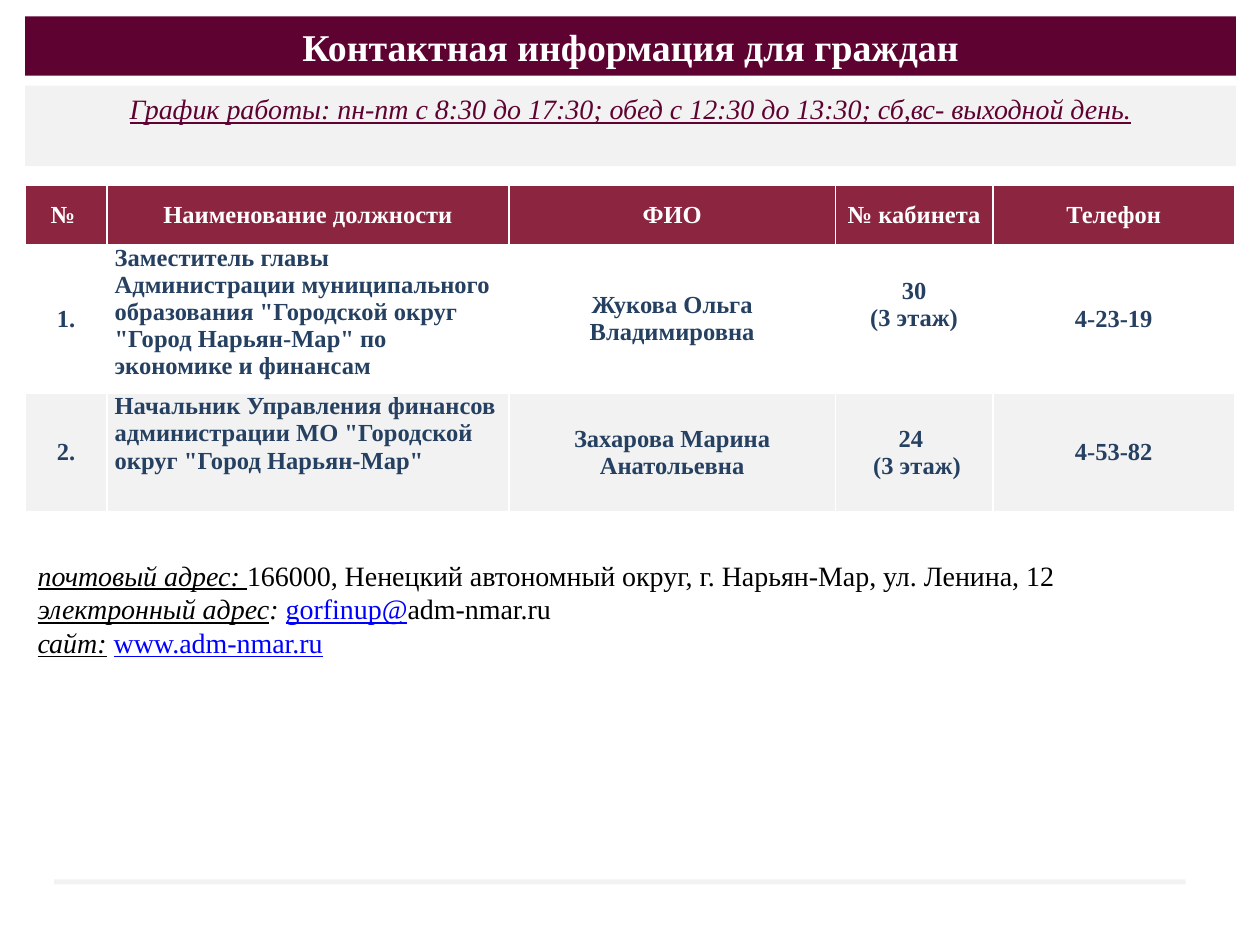
from dataclasses import dataclass

from lxml import etree
from pptx import Presentation
from pptx import util as u
from pptx.dml.color import RGBColor
from pptx.enum import shapes, text
from pptx.oxml.ns import qn


@dataclass(frozen=True)
class Theme:
    """Colours, font and type sizes of the slide."""
    font: str = "Times New Roman"
    plum: str = "5E0231"
    wine: str = "8C2540"
    grey: str = "F2F2F2"
    white: str = "FFFFFF"
    navy: str = "254061"
    black: str = "000000"
    blue: str = "0000FF"
    title_size: float = 21.6
    body_size: float = 16
    table_size: float = 14


THEME = Theme()
LEFT, WIDTH = 0.2, 9.61
COLUMNS = [0.65, 3.19, 2.59, 1.25, 1.92]
ROWS = [0.47, 1.18, 0.94]
POSITION_COLUMN = 1
CELLS = [
    ["№ ", "Наименование должности", "ФИО", "№ кабинета", "Телефон"],
    ["1.", 'Заместитель главы Администрации муниципального образования "Городской округ '
     '"Город Нарьян-Мар" по экономике и финансам',
     "Жукова Ольга Владимировна", "30\n(3 этаж)", "4-23-19"],
    ["2.", 'Начальник Управления финансов администрации МО "Городской округ "Город Нарьян-Мар"',
     "Захарова Марина Анатольевна", "24 \n (3 этаж)", "4-53-82"],
]
LABEL = {"italic": True, "underline": True}
LINK = {"color": THEME.blue, "underline": True}
CONTACTS = [
    [("почтовый адрес: ", LABEL),
     ("166000, Ненецкий автономный округ, г. Нарьян-Мар, ул. Ленина, 12", {})],
    [("электронный адрес", LABEL), (": ", {"italic": True}), ("gorfinup@", LINK),
     ("adm-nmar.ru", {})],
    [("сайт:", LABEL), (" ", {}), ("www.adm-nmar.ru", LINK)],
]


def place(left, top, width, height):
    """Turn inches into a position and size."""
    return [u.Inches(value) for value in (left, top, width, height)]


def paint(fill, color):
    """Give a solid fill its colour."""
    fill.solid()
    fill.fore_color.rgb = RGBColor.from_string(color)


def style_font(font, size, color=THEME.black, bold=False, italic=False, underline=False):
    """Set the look of a paragraph or run."""
    font.name, font.size = THEME.font, u.Pt(size)
    font.bold, font.italic, font.underline = bold, italic, underline
    font.color.rgb = RGBColor.from_string(color)


def write(frame, content, alignment, **style):
    """Fill a text frame with evenly styled paragraphs."""
    frame.text = content
    for paragraph in frame.paragraphs:
        paragraph.alignment = alignment
        style_font(paragraph.font, **style)


def add_title(slide, content):
    """Turn the title placeholder into a filled banner."""
    title = slide.shapes.title
    title.left, title.top, title.width, title.height = place(LEFT, 0.13, WIDTH, 0.47)
    paint(title.fill, THEME.plum)
    frame = title.text_frame
    frame.auto_size = text.MSO_AUTO_SIZE.NONE
    frame.vertical_anchor = text.MSO_ANCHOR.MIDDLE
    write(frame, content, text.PP_ALIGN.CENTER,
          size=THEME.title_size, color=THEME.white, bold=True)


def add_bar(slide, left, top, width, height):
    """Add a plain grey rectangle."""
    bar = slide.shapes.add_shape(shapes.MSO_SHAPE.RECTANGLE, *place(left, top, width, height))
    bar.shadow.inherit = False
    paint(bar.fill, THEME.grey)
    bar.line.fill.background()
    return bar


def add_schedule(slide, content):
    """Add the grey strip with the working hours."""
    frame = add_bar(slide, LEFT, 0.68, WIDTH, 0.64).text_frame
    frame.word_wrap = True
    frame.vertical_anchor = text.MSO_ANCHOR.TOP
    write(frame, content, text.PP_ALIGN.CENTER,
          size=THEME.body_size, color=THEME.plum, italic=True, underline=True)


def set_borders(cell):
    """Draw thin white lines on all four sides of a cell."""
    properties = cell._tc.get_or_add_tcPr()
    for index, side in enumerate(("a:lnL", "a:lnR", "a:lnT", "a:lnB")):
        line = etree.Element(qn(side), w=str(u.Pt(1)))
        solid = etree.SubElement(line, qn("a:solidFill"))
        etree.SubElement(solid, qn("a:srgbClr"), val=THEME.white)
        properties.insert(index, line)


def style_cell(cell, content, fill, color, is_position):
    """Fill and format one table cell."""
    cell.margin_left = cell.margin_right = u.Inches(0.06)
    cell.margin_top = cell.margin_bottom = 0
    cell.vertical_anchor = text.MSO_ANCHOR.TOP if is_position else text.MSO_ANCHOR.MIDDLE
    alignment = text.PP_ALIGN.LEFT if is_position else text.PP_ALIGN.CENTER
    write(cell.text_frame, content, alignment, size=THEME.table_size, color=color, bold=True)
    paint(cell.fill, fill)
    set_borders(cell)


def add_staff_table(slide):
    """Add the table of officials."""
    table = slide.shapes.add_table(
        len(ROWS), len(COLUMNS), *place(LEFT, 1.47, WIDTH, sum(ROWS))).table
    for column, width in zip(table.columns, COLUMNS):
        column.width = u.Inches(width)
    for row, height in zip(table.rows, ROWS):
        row.height = u.Inches(height)
    fills = [THEME.wine, THEME.white, THEME.grey]
    for row_index, (contents, fill) in enumerate(zip(CELLS, fills)):
        is_header = row_index == 0
        color = THEME.white if is_header else THEME.navy
        for column_index, content in enumerate(contents):
            is_position = column_index == POSITION_COLUMN and not is_header
            style_cell(table.cell(row_index, column_index), content, fill, color, is_position)
    table.cell(1, 3).margin_bottom = u.Inches(0.22)


def add_contacts(slide):
    """Add the postal, e-mail and web addresses."""
    frame = slide.shapes.add_textbox(*place(LEFT, 4.38, WIDTH, 1.18)).text_frame
    frame.word_wrap = True
    frame.vertical_anchor = text.MSO_ANCHOR.TOP
    for index, parts in enumerate(CONTACTS):
        paragraph = frame.add_paragraph() if index else frame.paragraphs[0]
        for content, style in parts:
            run = paragraph.add_run()
            run.text = content
            style_font(run.font, THEME.body_size, **style)


def main():
    """Build and save the contact slide."""
    presentation = Presentation()
    presentation.slide_width, presentation.slide_height = u.Inches(10), u.Inches(7.5)
    slide = presentation.slides.add_slide(presentation.slide_layouts.get_by_name("Title Only"))
    add_title(slide, "Контактная информация для граждан")
    add_staff_table(slide)
    add_contacts(slide)
    add_schedule(slide, "График работы: пн-пт с 8:30 до 17:30; обед с 12:30 до 13:30; "
                        "сб,вс- выходной день.")
    add_bar(slide, 0.43, 6.98, 8.98, 0.04)
    presentation.save("out.pptx")


if __name__ == "__main__":
    main()
